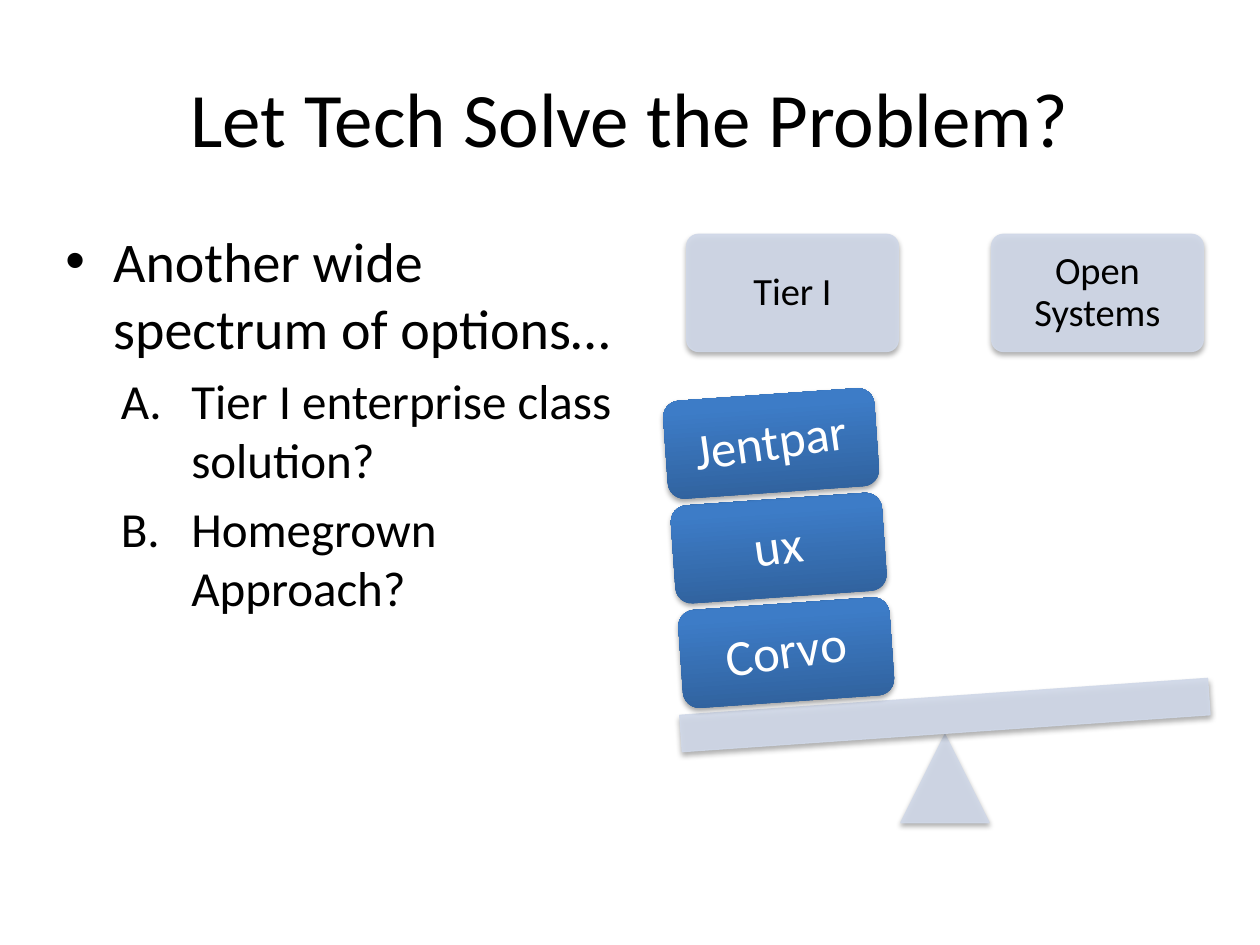
from lxml.etree import SubElement
from copy import deepcopy
from pptx import Presentation
from pptx.dml.color import RGBColor
from pptx.enum.shapes import MSO_SHAPE
from pptx.enum.text import MSO_ANCHOR, PP_ALIGN
from pptx.oxml.ns import qn
from pptx.util import Inches, Pt

deck = Presentation()
deck.slide_width, deck.slide_height = Inches(10), Inches(7.5)
slide = deck.slides.add_slide(deck.slide_layouts[6])
shapes = slide.shapes
hue = RGBColor.from_string


def write(box, lines, size, color, turn=0, inset=None, **form):
    text = shapes.add_textbox(*map(Inches, box))
    text.rotation = turn
    frame = text.text_frame
    frame.word_wrap = True
    frame.vertical_anchor = MSO_ANCHOR.MIDDLE
    if inset:
        for side in ("left", "top", "right", "bottom"):
            setattr(frame, "margin_" + side, Inches(inset))
    for i, line in enumerate(lines):
        para = frame.paragraphs[0] if i == 0 else frame.add_paragraph()
        for key, val in form.items():
            setattr(para, key, val)
        run = para.add_run()
        run.text = line
        look = {"name": "Calibri", "size": Pt(size)}
        for key, val in look.items():
            setattr(run.font, key, val)
        run.font.color.rgb = hue(color)
    return frame


def draw(kind, box, turn=0, stops=None):
    form = shapes.add_shape(kind, *map(Inches, box))
    form.rotation = turn
    form.shadow.inherit = False
    props = form.fill._xPr
    if stops:
        form.fill.gradient()
        form.fill.gradient_angle = 90
        bands = props.find(".//" + qn("a:gsLst"))
        bands.append(deepcopy(bands[-1]))
        for stop, (place, color) in zip(form.fill.gradient_stops, stops):
            stop.position = place
            stop.color.rgb = hue(color)
        form.line.fill.background()
    else:
        form.line.width = Pt(0.75)
        for fill in (form.fill, form.line.fill):
            fill.solid()
            fill.fore_color.rgb = hue("D0D8E8")
        for tint in props.iter(qn("a:srgbClr")):
            SubElement(tint, qn("a:alpha"), val="90000")
    glow = SubElement(props.find(qn("a:effectLst")), qn("a:outerShdw"),
                      blurRad="40000", dist="23000", dir="5400000", rotWithShape="0")
    tint = SubElement(glow, qn("a:srgbClr"), val="000000")
    SubElement(tint, qn("a:alpha"), val="35000")
    return form


write((0.5, 0.3, 9, 1.25), ["Let Tech Solve the Problem?"], 44, "000000",
      alignment=PP_ALIGN.CENTER)

items = ["Another wide spectrum of options…", "Tier I enterprise class solution?",
         "Homegrown Approach?"]
body = write((0.42, 1.75, 4.58, 4.95), items, 28, "000000")
body.vertical_anchor = MSO_ANCHOR.TOP
for i, para in enumerate(body.paragraphs):
    left, hang, size = (1, 0.56, 28) if i else (0.38, 0.38, 32)
    para.level = min(i, 1)
    para.space_before = Pt(size * 0.2)
    para.runs[0].font.size = Pt(size)
    props = para._p.get_or_add_pPr()
    props.set("marL", str(Inches(left)))
    props.set("indent", str(-Inches(hang)))
    if i:
        SubElement(props, qn("a:buFont"), typeface="+mj-lt")
        SubElement(props, qn("a:buAutoNum"), type="alphaUcPeriod")
    else:
        SubElement(props, qn("a:buFont"), typeface="Arial")
        SubElement(props, qn("a:buChar"), char="•")

label = {"alignment": PP_ALIGN.CENTER, "line_spacing": 0.9}
for left, name in ((5.45, "Tier I"), (7.87, "Open Systems")):
    box = (left, 1.86, 1.68, 0.93)
    card = draw(MSO_SHAPE.ROUNDED_RECTANGLE, box)
    card.adjustments[0] = 0.1
    write(box, [name], 22, "000000", inset=0.09, **label)

draw(MSO_SHAPE.ISOSCELES_TRIANGLE, (7.15, 5.83, 0.7, 0.7))
draw(MSO_SHAPE.RECTANGLE, (5.4, 5.53, 4.2, 0.29), 356)

blues = ((0, "2F5F99"), (0.8, "3D7CC7"), (1, "3A7CCB"))
for i, name in enumerate(("Corvo", "ux", "Jentpar")):
    box = (5.4 - 0.06 * i, 4.79 - 0.83 * i, 1.68, 0.78)
    draw(MSO_SHAPE.ROUNDED_RECTANGLE, box, 356, blues)
    write(box, [name], 29, "FFFFFF", 352, 0.12, **label)

deck.save("out.pptx")
